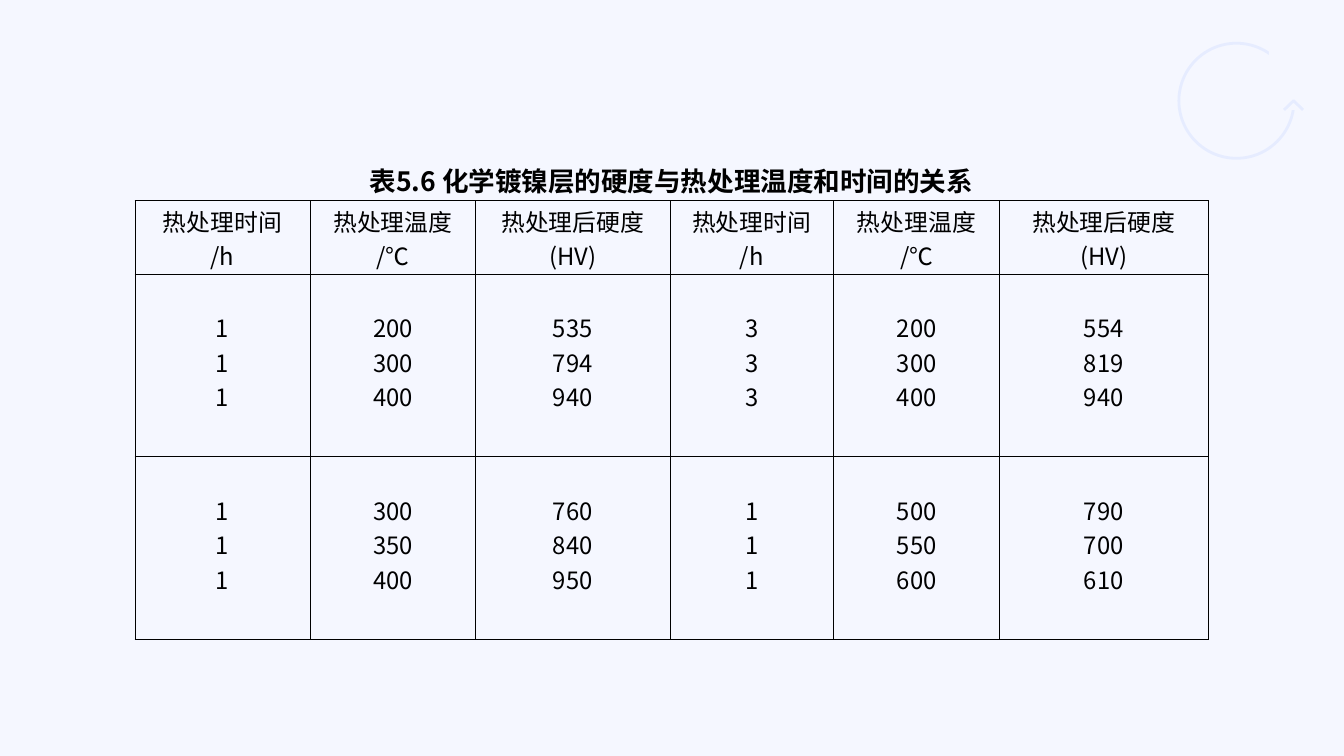
from lxml.etree import SubElement
from pptx import Presentation
from pptx.dml.color import RGBColor
from pptx.enum.shapes import MSO_SHAPE
from pptx.enum.text import MSO_ANCHOR, PP_ALIGN
from pptx.oxml import parse_xml
from pptx.oxml.ns import nsdecls, qn
from pptx.util import Cm, Pt

TITLE = "表5.6 化学镀镍层的硬度与热处理温度和时间的关系"
HEADERS = [("热处理时间", "/h"), ("热处理温度", "/℃"), ("热处理后硬度", "(HV)")] * 2
GROUPS = [
    [("1", "1", "1"), ("200", "300", "400"), ("535", "794", "940"),
     ("3", "3", "3"), ("200", "300", "400"), ("554", "819", "940")],
    [("1", "1", "1"), ("300", "350", "400"), ("760", "840", "950"),
     ("1", "1", "1"), ("500", "550", "600"), ("790", "700", "610")],
]
COLUMN_WIDTHS = [4.41, 4.18, 4.89, 4.13, 4.18, 5.25]
ROW_HEIGHTS = [1.04, 1.85, 4.6, 4.6]
TABLE_LEFT, TABLE_TOP = 3.4, 4.02
GROUP_INSET = 0.9

FONT = "Noto Sans CJK SC"
BACKGROUND = RGBColor(0xF5, 0xF7, 0xFF)
ACCENT = RGBColor(0x37, 0x6F, 0xFF)
BLACK = RGBColor(0, 0, 0)
ACCENT_OPACITY = 8


def write(cell, lines, size=17, bold=False, anchor=MSO_ANCHOR.TOP, top=0.03):
    """Fill a cell with centred lines of one paragraph."""
    cell.fill.background()
    cell.vertical_anchor = anchor
    cell.margin_left = cell.margin_right = Cm(0.03)
    cell.margin_top, cell.margin_bottom = Cm(top), 0
    paragraph = cell.text_frame.paragraphs[0]
    paragraph.alignment = PP_ALIGN.CENTER
    for index, line in enumerate(lines):
        if index:
            paragraph.add_line_break()
        run = paragraph.add_run()
        run.text = line
        font = run.font
        font.size, font.bold, font.name = Pt(size), bold, FONT
        font.color.rgb = BLACK
        SubElement(run._r.get_or_add_rPr(), qn("a:ea"), typeface=FONT)
    for line_break in paragraph._p.findall(qn("a:br")):
        SubElement(line_break, qn("a:rPr"), sz=str(size * 100))


def draw_borders(cell, visible):
    """Rule the named sides of a cell and clear the others."""
    properties = cell._tc.get_or_add_tcPr()
    for index, side in enumerate(("L", "R", "T", "B")):
        paint = (f'<a:solidFill><a:srgbClr val="{BLACK}"/></a:solidFill>'
                 if side in visible else "<a:noFill/>")
        properties.insert(index, parse_xml(
            f'<a:ln{side} {nsdecls("a")} w="{Pt(0.5)}">{paint}</a:ln{side}>'))


def paint_ornament(shape, outlined=True):
    shape.shadow.inherit = False
    shape.fill.solid()
    shape.fill.fore_color.rgb = BACKGROUND
    if not outlined:
        shape.line.fill.background()
        return
    shape.line.color.rgb = ACCENT
    shape.line.width = Pt(2)
    color = shape.line._ln.find(".//" + qn("a:srgbClr"))
    SubElement(color, qn("a:alpha"), val=str(ACCENT_OPACITY * 1000))


def add_ornament(shapes):
    """Draw a ring, open at the upper right, that ends in an arrowhead."""
    paint_ornament(shapes.add_shape(
        MSO_SHAPE.OVAL, Cm(29.71), Cm(1.09), Cm(2.9), Cm(2.9)))
    paint_ornament(shapes.add_shape(
        MSO_SHAPE.RECTANGLE, Cm(31.98), Cm(1.14), Cm(0.86), Cm(1.45)), outlined=False)
    arrowhead = shapes.build_freeform(Cm(32.84), Cm(2.77))
    arrowhead.add_line_segments([(Cm(32.6), Cm(2.54)), (Cm(32.36), Cm(2.77))], close=False)
    paint_ornament(arrowhead.convert_to_shape())


def add_hardness_table(shapes):
    table = shapes.add_table(
        len(ROW_HEIGHTS), len(COLUMN_WIDTHS), Cm(TABLE_LEFT), Cm(TABLE_TOP),
        Cm(sum(COLUMN_WIDTHS)), Cm(sum(ROW_HEIGHTS))).table
    table.first_row = table.horz_banding = False
    for column, width in zip(table.columns, COLUMN_WIDTHS):
        column.width = Cm(width)
    for row, height in zip(table.rows, ROW_HEIGHTS):
        row.height = Cm(height)

    table.cell(0, 0).merge(table.cell(0, len(COLUMN_WIDTHS) - 1))
    write(table.cell(0, 0), [TITLE], size=19, bold=True)
    for column, header in enumerate(HEADERS):
        write(table.cell(1, column), header, anchor=MSO_ANCHOR.MIDDLE)
    for row, group in enumerate(GROUPS, start=2):
        for column, values in enumerate(group):
            write(table.cell(row, column), values, top=GROUP_INSET)

    for index, row in enumerate(table.rows):
        for cell in row.cells:
            draw_borders(cell, "LRTB" if index else "B")


def main():
    presentation = Presentation()
    presentation.slide_width, presentation.slide_height = Cm(33.87), Cm(19.05)
    slide = presentation.slides.add_slide(presentation.slide_layouts[6])
    slide.background.fill.solid()
    slide.background.fill.fore_color.rgb = BACKGROUND
    add_ornament(slide.shapes)
    add_hardness_table(slide.shapes)
    presentation.save("out.pptx")


if __name__ == "__main__":
    main()
